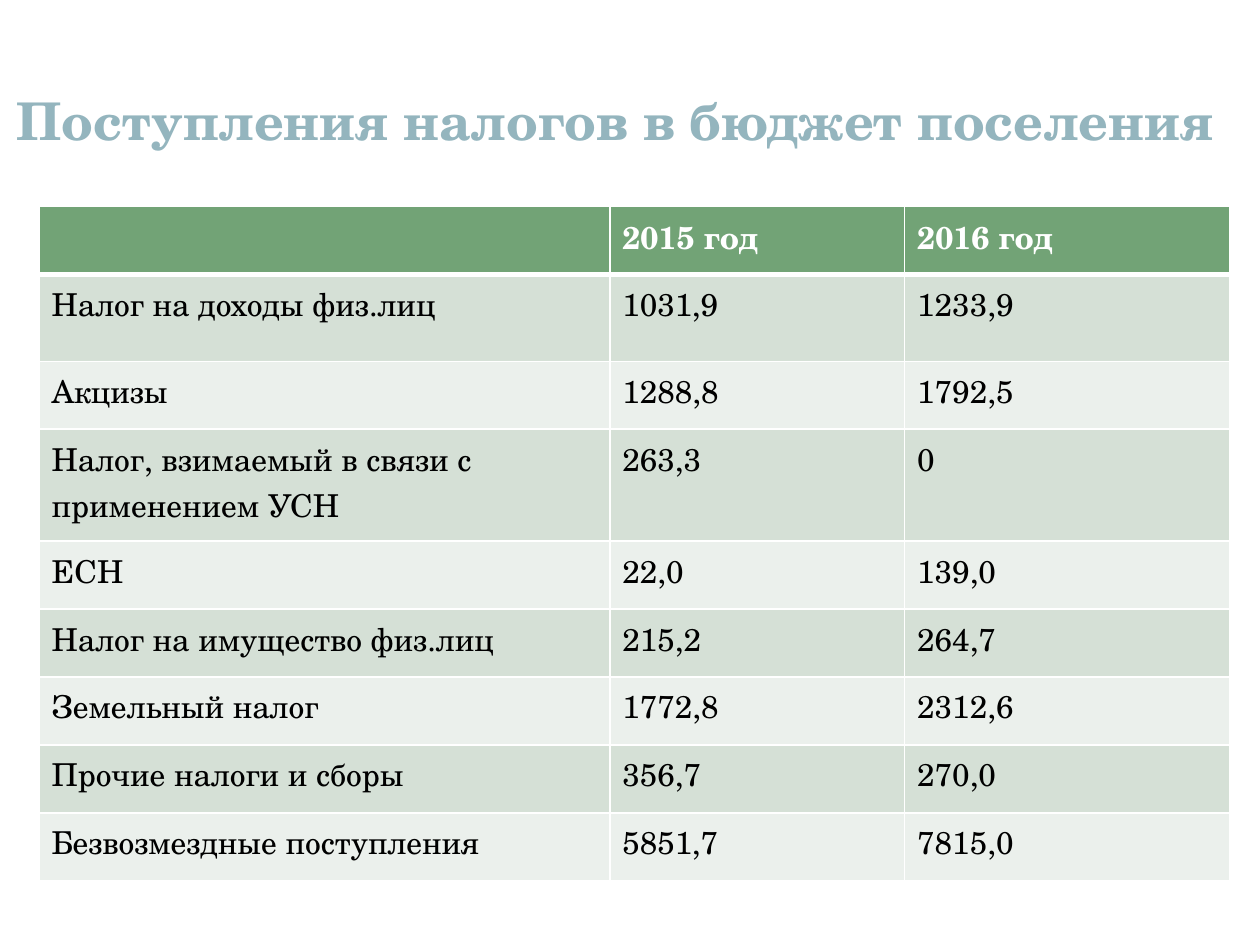
from lxml import etree
from pptx import Presentation
from pptx.dml.color import RGBColor
from pptx.enum.text import MSO_ANCHOR, PP_ALIGN
from pptx.oxml.ns import qn
from pptx.util import Inches, Pt

CENTER = PP_ALIGN.CENTER
BOTTOM = MSO_ANCHOR.BOTTOM

FONT = "TeX Gyre Schola"
WHITE, BLACK, TITLE_BLUE = "FFFFFF", "000000", "94B5BE"
HEADER_GREEN, BAND_DARK, BAND_LIGHT = "72A376", "D5E0D6", "EBF0EC"

TITLE = "Поступления налогов в бюджет поселения"
TAX_ROWS = [
    ("", "2015 год", "2016 год"),
    ("Налог на доходы физ.лиц", "1031,9", "1233,9"),
    ("Акцизы", "1288,8", "1792,5"),
    ("Налог, взимаемый в связи с применением УСН", "263,3", "0"),
    ("ЕСН", "22,0", "139,0"),
    ("Налог на имущество физ.лиц", "215,2", "264,7"),
    ("Земельный налог", "1772,8", "2312,6"),
    ("Прочие налоги и сборы", "356,7", "270,0"),
    ("Безвозмездные поступления", "5851,7", "7815,0"),
]
COLUMN_WIDTHS = (4.53, 2.34, 2.58)
ROW_HEIGHT = 0.54
TALL_ROWS = {1: 0.69, 3: 0.89}


def rgb(hex_color):
    return RGBColor.from_string(hex_color)


def format_text(text_frame, size, color, bold):
    for paragraph in text_frame.paragraphs:
        for run in paragraph.runs:
            run.font.name = FONT
            run.font.size = Pt(size)
            run.font.bold = bold
            run.font.color.rgb = rgb(color)


def set_borders(cell, bottom_width):
    """Draw white cell borders; they must precede the fill in the XML."""
    properties = cell._tc.get_or_add_tcPr()
    widths = {"a:lnL": 1, "a:lnR": 1, "a:lnT": 1, "a:lnB": bottom_width}
    for position, (tag, width) in enumerate(widths.items()):
        line = etree.Element(qn(tag), w=str(Pt(width)))
        fill = etree.SubElement(line, qn("a:solidFill"))
        etree.SubElement(fill, qn("a:srgbClr"), val=WHITE)
        properties.insert(position, line)


def add_title(slide, left, top, width, height):
    shape = slide.shapes.add_textbox(left, top, width, height)
    text_frame = shape.text_frame
    text_frame.word_wrap = True
    text_frame.vertical_anchor = BOTTOM
    text_frame.text = TITLE
    text_frame.paragraphs[0].alignment = CENTER
    format_text(text_frame, 29.7, TITLE_BLUE, True)


def add_tax_table(slide, left, top, width, height):
    frame = slide.shapes.add_table(
        len(TAX_ROWS), len(COLUMN_WIDTHS), left, top, width, height)
    table = frame.table

    # Share the box between columns and rows
    for column, share in zip(table.columns, COLUMN_WIDTHS):
        column.width = int(width * share / sum(COLUMN_WIDTHS))
    heights = [TALL_ROWS.get(i, ROW_HEIGHT) for i in range(len(TAX_ROWS))]
    for row, share in zip(table.rows, heights):
        row.height = int(height * share / sum(heights))

    # Header row, then alternating bands
    for row_index, values in enumerate(TAX_ROWS):
        is_header = row_index == 0
        band = BAND_DARK if row_index % 2 else BAND_LIGHT
        for column_index, value in enumerate(values):
            cell = table.cell(row_index, column_index)
            cell.text = value
            format_text(cell.text_frame, 18, WHITE if is_header else BLACK, is_header)
            cell.fill.solid()
            cell.fill.fore_color.rgb = rgb(HEADER_GREEN if is_header else band)
            set_borders(cell, 3 if is_header else 1)
            if row_index == 1:
                # Match the thick line under the header
                cell._tc.tcPr.find(qn("a:lnT")).set("w", str(Pt(3)))


def main():
    presentation = Presentation()
    presentation.slide_width = Inches(10)
    presentation.slide_height = Inches(7.5)
    slide = presentation.slides.add_slide(presentation.slide_layouts[6])

    add_title(slide, 0, Inches(0.25), Inches(9.77), Inches(1))
    add_tax_table(slide, Inches(0.31), Inches(1.64), Inches(9.45), Inches(5.35))
    presentation.save("out.pptx")


if __name__ == "__main__":
    main()
